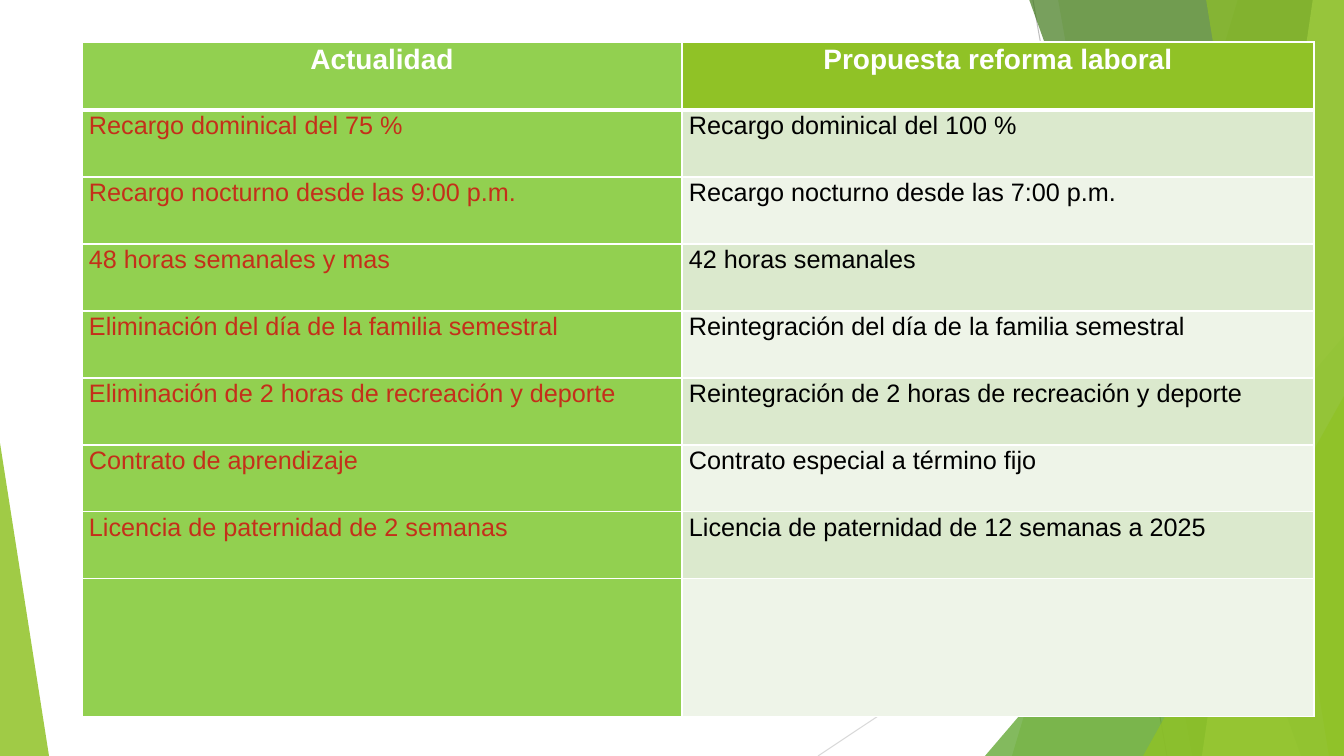
"""Build the slide comparing current labour rules with the proposed reform."""
from dataclasses import dataclass

from lxml import etree
from pptx import Presentation
from pptx import util as u
from pptx.dml.color import RGBColor
from pptx.enum import shapes, text
from pptx.oxml import ns

SCALE = 914400 / 100.8
WIDTH, HEIGHT = 1344, 756


@dataclass(frozen=True)
class Theme:
    """Colours, font and type sizes of the slide."""
    font: str = "Arial"
    header_size: int = 20
    body_size: int = 18
    white: str = "FFFFFF"
    black: str = "000000"
    red: str = "C42F1A"
    lime: str = "90C226"
    green: str = "54A021"
    forest: str = "3F7819"
    pale_lime: str = "C0E474"
    current: str = "92D050"
    bands: tuple = ("DBE9CD", "EEF4E8")
    steep_line: str = "BFBFBF"
    shallow_line: str = "D9D9D9"


THEME = Theme()

HEADERS = ("Actualidad", "Propuesta reforma laboral")
COMPARISON = (
    ("Recargo dominical del 75 %", "Recargo dominical del 100 %"),
    ("Recargo nocturno desde las 9:00 p.m.", "Recargo nocturno desde las 7:00 p.m."),
    ("48 horas semanales y mas", "42 horas semanales"),
    ("Eliminación del día de la familia semestral",
     "Reintegración del día de la familia semestral"),
    ("Eliminación de 2 horas de recreación y deporte",
     "Reintegración de 2 horas de recreación y deporte"),
    ("Contrato de aprendizaje", "Contrato especial a término fijo"),
    ("Licencia de paternidad de 2 semanas", "Licencia de paternidad de 12 semanas a 2025"),
    ("", ""),
)
COLUMN_WIDTHS = (600, 632)
ROW_HEIGHTS = (68, *[67] * 7, 138)


def px(length):
    """Turn whole pixels into EMU."""
    return u.Emu(round(length * SCALE))


def add_child(parent, tag, **attributes):
    """Append a DrawingML element and return it."""
    return etree.SubElement(parent, ns.qn(tag), attributes)


def paint(shape, colour, opacity):
    """Give a shape a translucent fill and no outline or shadow."""
    shape.shadow.inherit = False
    shape.line.fill.background()
    shape.fill.solid()
    shape.fill.fore_color.rgb = RGBColor.from_string(colour)
    colour_node = shape.element.spPr.xpath("./a:solidFill/a:srgbClr")[0]
    add_child(colour_node, "a:alpha", val=str(opacity * 1000))


def add_ray(page, start, end, colour):
    """Draw a thin background line."""
    line = page.shapes.add_connector(
        shapes.MSO_CONNECTOR.STRAIGHT, *map(px, (*start, *end)))
    line.line.color.rgb = RGBColor.from_string(colour)
    line.line.width = u.Pt(0.75)
    add_child(line.element.spPr, "a:effectLst")


def add_band(page, top_left, bottom_left, colour, opacity):
    """Draw a slanted band reaching the right edge of the slide."""
    builder = page.shapes.build_freeform(top_left, -1, SCALE)
    builder.add_line_segments(
        [(WIDTH, -1), (WIDTH, HEIGHT), (bottom_left, HEIGHT)], close=True)
    paint(builder.convert_to_shape(), colour, opacity)


def add_corner(page, left, top, width, apex, colour, opacity):
    """Draw a right triangle standing on the bottom edge of the slide."""
    triangle = page.shapes.add_shape(
        shapes.MSO_SHAPE.ISOSCELES_TRIANGLE,
        *map(px, (left, top, width, HEIGHT - top)))
    triangle.adjustments[0] = apex
    paint(triangle, colour, opacity)


def add_backdrop(page):
    """Draw the green facets behind the table."""
    add_ray(page, (1033, 0), (1167, HEIGHT), THEME.steep_line)
    add_ray(page, (WIDTH, 406), (818, HEIGHT), THEME.shallow_line)
    add_band(page, 1238, 1012, THEME.lime, 30)
    add_band(page, 1058, 1192, THEME.lime, 20)
    add_corner(page, 985, 336, 359, 1, THEME.green, 72)
    add_band(page, 1029, 1301, THEME.forest, 70)
    add_band(page, 1313, 1202, THEME.pale_lime, 70)
    add_band(page, 1206, 1329, THEME.lime, 65)
    add_corner(page, 1143, 396, 201, 1, THEME.lime, 80)
    add_corner(page, 0, 443, 49, 0, THEME.lime, 85)


def set_borders(cell, top, bottom):
    """Put white borders round a cell, with widths in points."""
    properties = cell._tc.get_or_add_tcPr()
    for index, (side, width) in enumerate(
            (("L", 1), ("R", 1), ("T", top), ("B", bottom))):
        border = etree.Element(ns.qn(f"a:ln{side}"), {"w": str(u.Pt(width))})
        add_child(add_child(border, "a:solidFill"), "a:srgbClr", val=THEME.white)
        properties.insert(index, border)


def fill_cell(cell, wording, fill, colour, is_header):
    """Write and format one table cell."""
    cell.fill.solid()
    cell.fill.fore_color.rgb = RGBColor.from_string(fill)
    cell.margin_left = cell.margin_right = px(7)
    cell.margin_top = cell.margin_bottom = 0
    cell.text = wording
    para = cell.text_frame.paragraphs[0]
    para.alignment = text.PP_ALIGN.CENTER if is_header else text.PP_ALIGN.JUSTIFY
    para.line_spacing = 1.07
    para.space_after = u.Pt(8)
    para.font.name = THEME.font
    para.font.size = u.Pt(THEME.header_size if is_header else THEME.body_size)
    para.font.bold = is_header
    para.font.color.rgb = RGBColor.from_string(colour)


def add_comparison(page):
    """Add the table of current rules against proposed ones."""
    table = page.shapes.add_table(
        len(ROW_HEIGHTS), len(COLUMN_WIDTHS), px(82), px(42),
        px(sum(COLUMN_WIDTHS)), px(sum(ROW_HEIGHTS))).table
    for column, width in zip(table.columns, COLUMN_WIDTHS):
        column.width = px(width)
    for row, height in zip(table.rows, ROW_HEIGHTS):
        row.height = px(height)
    for number, wordings in enumerate((HEADERS, *COMPARISON)):
        is_header = number == 0
        if is_header:
            fills, colours = (THEME.current, THEME.lime), (THEME.white, THEME.white)
        else:
            fills = (THEME.current, THEME.bands[(number - 1) % 2])
            colours = (THEME.red, THEME.black)
        for cell, wording, fill, colour in zip(
                table.rows[number].cells, wordings, fills, colours):
            fill_cell(cell, wording, fill, colour, is_header)
            set_borders(cell, 3 if number == 1 else 1, 3 if is_header else 1)


def main():
    """Build and save the deck."""
    deck = Presentation()
    deck.slide_width, deck.slide_height = px(WIDTH), px(HEIGHT)
    page = deck.slides.add_slide(deck.slide_layouts[6])
    add_backdrop(page)
    add_comparison(page)
    deck.save("out.pptx")


if __name__ == "__main__":
    main()
